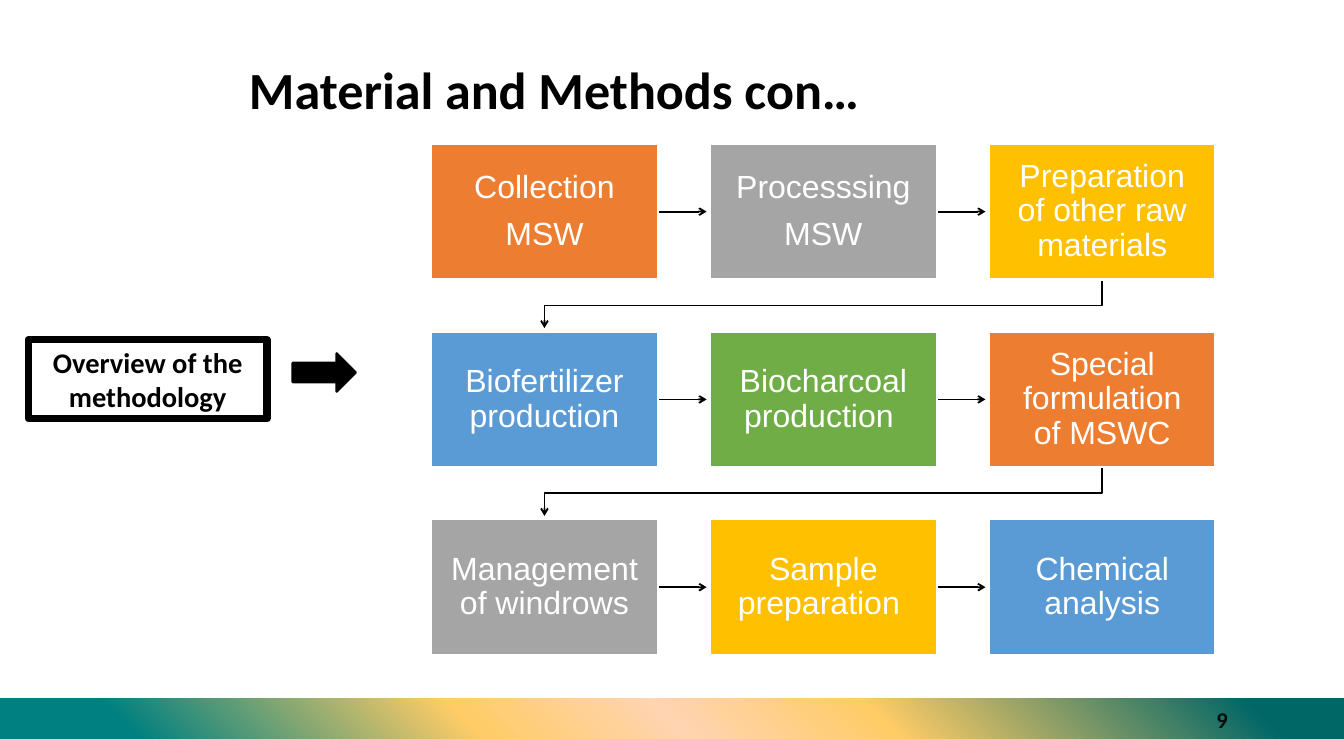
from dataclasses import dataclass

from lxml.etree import SubElement
from pptx import Presentation
from pptx.dml.color import RGBColor
from pptx.enum.shapes import MSO_CONNECTOR, MSO_SHAPE
from pptx.enum.text import MSO_ANCHOR, PP_ALIGN
from pptx.oxml.ns import qn
from pptx.shapes.autoshape import Shape
from pptx.shapes.connector import Connector
from pptx.slide import Slide
from pptx.text.text import TextFrame
from pptx.util import Cm, Pt

BLACK, WHITE = "000000", "FFFFFF"
ORANGE, GREY, GOLD, BLUE, GREEN = "ED7D31", "A5A5A5", "FFC000", "5B9BD5", "70AD47"

# Flow chart grid, in centimetres
COLUMNS = 3
GRID_LEFT, GRID_TOP = 12.83, 4.28
BOX_WIDTH, BOX_HEIGHT = 6.75, 4.04
GAP = 1.55
ARROW_CLEARANCE = 0.1

BAND_STOPS = [(0, "008080"), (10, "008080"), (35, "FFCC66"), (50, "FFD4B1"),
              (65, "FFCC66"), (93, "006666"), (100, "006666")]


@dataclass(frozen=True)
class Area:
    left: float
    top: float
    width: float
    height: float

    def lengths(self) -> tuple[Cm, Cm, Cm, Cm]:
        return Cm(self.left), Cm(self.top), Cm(self.width), Cm(self.height)


@dataclass(frozen=True)
class TextStyle:
    font: str
    size: float
    color: str
    bold: bool = False
    align: PP_ALIGN = PP_ALIGN.CENTER
    line_spacing: float = 1.0
    space_after: float = 0
    inset_x: float = 0.3
    inset_y: float = 0.15


@dataclass(frozen=True)
class Step:
    text: str
    color: str


STEP_STYLE = TextStyle("Arial", 27, WHITE, line_spacing=0.9, space_after=10.9,
                       inset_x=0.53, inset_y=0.53)
TITLE_STYLE = TextStyle("Calibri", 44, BLACK, True, PP_ALIGN.LEFT, 0.9)
OVERVIEW_STYLE = TextStyle("Calibri", 24, BLACK, True)
NUMBER_STYLE = TextStyle("Calibri", 19, "0C0C0C", True, PP_ALIGN.RIGHT)

STEPS = [
    Step("Collection\nMSW", ORANGE),
    Step("Processsing\nMSW", GREY),
    Step("Preparation of other raw materials", GOLD),
    Step("Biofertilizer production", BLUE),
    Step("Biocharcoal production ", GREEN),
    Step("Special formulation of MSWC", ORANGE),
    Step("Management of windrows", GREY),
    Step("Sample preparation ", GOLD),
    Step("Chemical analysis", BLUE),
]


def rgb(color: str) -> RGBColor:
    return RGBColor.from_string(color)


def write(text_frame: TextFrame, text: str, style: TextStyle) -> None:
    text_frame.word_wrap = True
    text_frame.vertical_anchor = MSO_ANCHOR.MIDDLE
    text_frame.margin_left = text_frame.margin_right = Cm(style.inset_x)
    text_frame.margin_top = text_frame.margin_bottom = Cm(style.inset_y)
    text_frame.text = text
    for paragraph in text_frame.paragraphs:
        paragraph.alignment = style.align
        paragraph.line_spacing = style.line_spacing
        paragraph.space_after = Pt(style.space_after)
        for run in paragraph.runs:
            run.font.name = style.font
            run.font.size = Pt(style.size)
            run.font.bold = style.bold
            run.font.color.rgb = rgb(style.color)


def set_line(shape: Shape | Connector, color: str, width: float,
             arrow: bool = False) -> None:
    shape.line.color.rgb = rgb(color)
    shape.line.width = Pt(width)
    line = shape.line._get_or_add_ln()
    SubElement(line, qn("a:round"))
    if arrow:
        SubElement(line, qn("a:tailEnd"), type="arrow")


def add_block(slide: Slide, kind: MSO_SHAPE, area: Area, fill: str | None,
              line: str, line_width: float) -> Shape:
    shape = slide.shapes.add_shape(kind, *area.lengths())
    shape.shadow.inherit = False
    if fill:
        shape.fill.solid()
        shape.fill.fore_color.rgb = rgb(fill)
    else:
        shape.fill.background()
    set_line(shape, line, line_width)
    return shape


def add_text(slide: Slide, area: Area, text: str, style: TextStyle) -> None:
    write(slide.shapes.add_textbox(*area.lengths()).text_frame, text, style)


def add_band(slide: Slide, area: Area) -> None:
    band = slide.shapes.add_shape(MSO_SHAPE.RECTANGLE, *area.lengths())
    band.shadow.inherit = False
    band.line.fill.background()
    band.fill.gradient()
    gradient = band._element.spPr.find(qn("a:gradFill"))
    for child in list(gradient):
        gradient.remove(child)
    stops = SubElement(gradient, qn("a:gsLst"))
    for position, color in BAND_STOPS:
        stop = SubElement(stops, qn("a:gs"), pos=str(position * 1000))
        SubElement(stop, qn("a:srgbClr"), val=color)
    # Circles spread from the bottom left corner
    circle = SubElement(gradient, qn("a:path"), path="circle")
    SubElement(circle, qn("a:fillToRect"), t="100000", r="100000")


def step_area(index: int) -> Area:
    row, column = divmod(index, COLUMNS)
    return Area(GRID_LEFT + column * (BOX_WIDTH + GAP),
                GRID_TOP + row * (BOX_HEIGHT + GAP), BOX_WIDTH, BOX_HEIGHT)


def add_straight_arrow(slide: Slide, start: Area, end: Area) -> None:
    middle = Cm(start.top + start.height / 2)
    arrow = slide.shapes.add_connector(
        MSO_CONNECTOR.STRAIGHT, Cm(start.left + start.width), middle,
        Cm(end.left - ARROW_CLEARANCE), middle)
    set_line(arrow, BLACK, 1.5, arrow=True)
    SubElement(arrow._element.spPr, qn("a:effectLst"))


def add_row_arrow(slide: Slide, start: Area, end: Area) -> None:
    start_x, end_x = start.left + start.width / 2, end.left + end.width / 2
    bottom = start.top + start.height
    turn = (bottom + end.top) / 2
    builder = slide.shapes.build_freeform(Cm(start_x), Cm(bottom))
    builder.add_line_segments(
        [(Cm(start_x), Cm(turn)), (Cm(end_x), Cm(turn)),
         (Cm(end_x), Cm(end.top - ARROW_CLEARANCE))], close=False)
    arrow = builder.convert_to_shape()
    arrow.shadow.inherit = False
    arrow.fill.background()
    set_line(arrow, BLACK, 1.5, arrow=True)


def add_flow_chart(slide: Slide) -> None:
    areas = [step_area(index) for index in range(len(STEPS))]
    # Arrows lie under the boxes
    for start, end in zip(areas, areas[1:]):
        add_arrow = add_straight_arrow if start.top == end.top else add_row_arrow
        add_arrow(slide, start, end)
    for step, area in zip(STEPS, areas):
        box = add_block(slide, MSO_SHAPE.RECTANGLE, area, step.color, WHITE, 2)
        write(box.text_frame, step.text, STEP_STYLE)


def main() -> None:
    presentation = Presentation()
    presentation.slide_width, presentation.slide_height = Cm(40), Cm(22)
    slide = presentation.slides.add_slide(presentation.slide_layouts[6])

    # Footer band and title
    add_band(slide, Area(0, 20.79, 40, 1.21))
    add_text(slide, Area(7.11, 0.86, 30.45, 3.78),
             "Material and Methods con…", TITLE_STYLE)

    add_flow_chart(slide)

    # Slide number, overview label and its arrow
    add_text(slide, Area(27.84, 20.85, 9, 1.17), "9", NUMBER_STYLE)
    overview = add_block(slide, MSO_SHAPE.RECTANGLE, Area(0.84, 10.11, 7.11, 2.36),
                         None, BLACK, 6)
    write(overview.text_frame, "Overview of the methodology", OVERVIEW_STYLE)
    add_block(slide, MSO_SHAPE.RIGHT_ARROW, Area(8.71, 10.52, 1.88, 1.14),
              BLACK, BLACK, 2)

    presentation.save("out.pptx")


if __name__ == "__main__":
    main()
